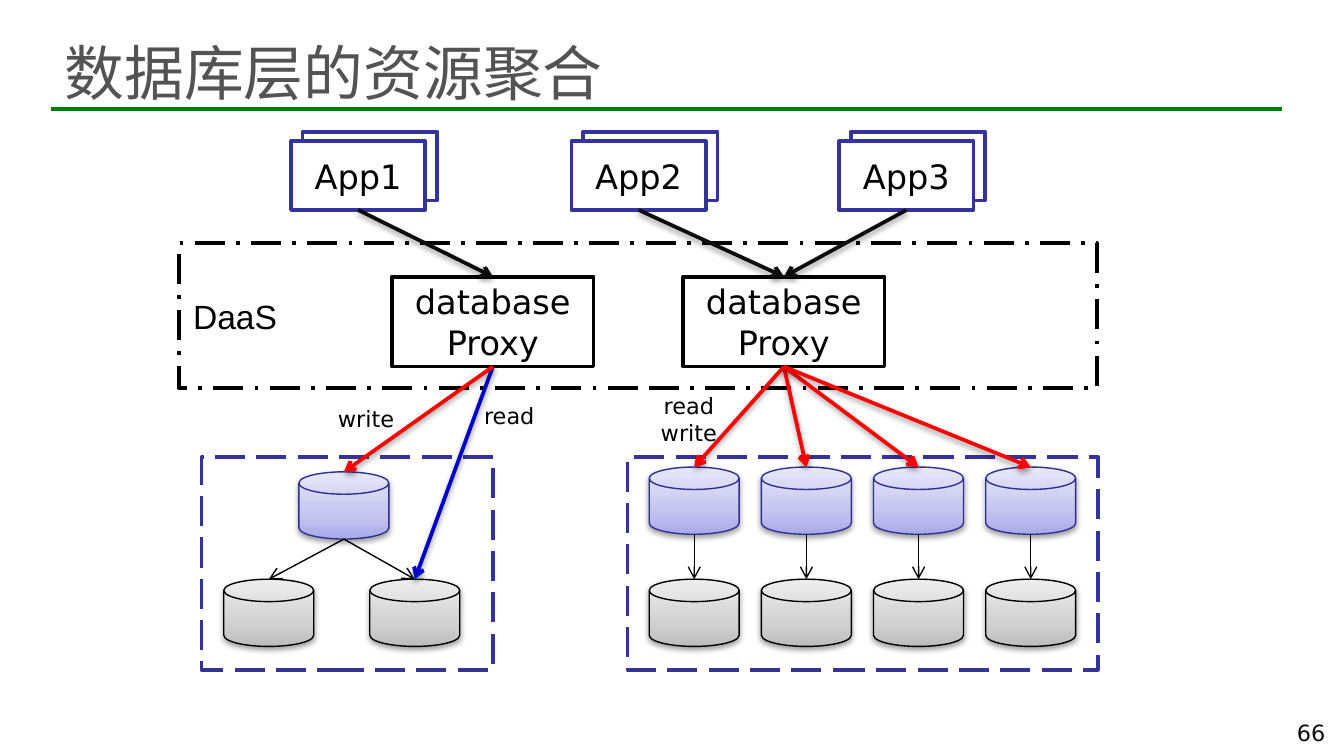
from lxml import etree
from pptx import Presentation
from pptx.dml.color import RGBColor
from pptx.enum.dml import MSO_LINE
from pptx.enum.shapes import MSO_CONNECTOR, MSO_SHAPE
from pptx.enum.text import MSO_ANCHOR, MSO_AUTO_SIZE, PP_ALIGN
from pptx.oxml.ns import qn
from pptx.util import Cm, Pt

RECT, DISK = MSO_SHAPE.RECTANGLE, MSO_SHAPE.FLOWCHART_MAGNETIC_DISK
STRAIGHT = MSO_CONNECTOR.STRAIGHT
DASH, DASH_DOT = MSO_LINE.LONG_DASH, MSO_LINE.LONG_DASH_DOT
LEFT, CENTER = PP_ALIGN.LEFT, PP_ALIGN.CENTER
MIDDLE, TOP = MSO_ANCHOR.MIDDLE, MSO_ANCHOR.TOP
NO_FIT = MSO_AUTO_SIZE.NONE

SANS, CJK, ARIAL = "DejaVu Sans", "Noto Sans CJK SC", "Arial"
BLACK, WHITE, INK, NAVY = "000000", "FFFFFF", "0D0D0D", "333399"
RED, BLUE, GREEN, GREY = "FF0000", "0000CC", "008000", "535353"

TITLE = "数据库层的资源聚合"
PAGE = "66"
LAYER = ("DaaS", (3.4, 5.46, 2.1, 1.02))
LAYER_BOX = (3.38, 4.6, 17.35, 2.74)
LABELS = [
    (["read", "write"], (12.17, 7.39, 1.7, 1.07)),
    (["read"], (8.89, 7.44, 1.47, 0.84)),
    (["write"], (5.94, 7.54, 1.96, 0.76)),
]
CLUSTERS = [(3.81, 8.64, 5.51, 4.02), (11.86, 8.64, 8.89, 4.02)]
APPS = [("App1", 5.5, 0), ("App2", 10.8, 1), ("App3", 15.86, 1)]
APP_Y, APP_W, APP_H = 2.67, 2.54, 1.3
STACK_DX, STACK_DY = 0.22, -0.18
PROXY_TEXT = ["database", "Proxy"]
PROXY_X, PROXY_Y, PROXY_W, PROXY_H = [7.41, 12.91], 5.23, 3.81, 1.7
DISK_W, DISK_H = 1.7, 1.27
MASTER = (5.65, 8.92)
REPLICA_X, REPLICA_Y = [4.23, 6.99], 10.95
SHARDS, SHARD_X, SHARD_Y, SHARD_STEP = 4, 12.27, 8.83, 2.12
PRIMARY = {"line": "2F2F98", "stops": [(0, "A9A9E9"), (35, "C4C4EF"), (100, "E8E8FA")]}
SECONDARY = {"line": BLACK, "stops": [(0, "BDBDBD"), (35, "D1D1D1"), (100, "EEEEEE")]}


def rgb(value):
    return RGBColor.from_string(value)


def write(shape, lines, size, font=SANS, color=BLACK, align=CENTER, anchor=MIDDLE, wrap=True):
    tf = shape.text_frame
    for name, value in {"word_wrap": wrap, "vertical_anchor": anchor, "auto_size": NO_FIT}.items():
        setattr(tf, name, value)
    for i, line in enumerate(lines):
        p = tf.add_paragraph() if i else tf.paragraphs[0]
        p.alignment = align
        r = p.add_run()
        r.text = line
        for name, value in {"size": Pt(size), "name": font, "bold": False}.items():
            setattr(r.font, name, value)
        r.font.color.rgb = rgb(color)
        etree.SubElement(r.font._element, qn("a:ea"), typeface=font)


def add_effects(shape, shadow):
    effects = etree.SubElement(shape._element.spPr, qn("a:effectLst"))
    if shadow:
        outer = etree.SubElement(effects, qn("a:outerShdw"), blurRad="40000", dist="20000",
                                 dir="5400000", rotWithShape="0")
        color = etree.SubElement(outer, qn("a:srgbClr"), val=BLACK)
        etree.SubElement(color, qn("a:alpha"), val="38000")


def add_box(shapes, box, line=None, dash=None):
    sp = shapes.add_shape(RECT, *map(Cm, box))
    sp.fill.solid()
    sp.fill.fore_color.rgb = rgb(WHITE)
    if line:
        sp.line.color.rgb = rgb(line)
        sp.line.width = Pt(2)
        sp.line.dash_style = dash
    else:
        sp.line.fill.background()
    add_effects(sp, False)
    return sp


def add_disk(shapes, x, y, look):
    sp = shapes.add_shape(DISK, *map(Cm, (x, y, DISK_W, DISK_H)))
    sp.fill.gradient()
    sp.fill.gradient_angle = 90
    stops = sp._element.spPr.find(".//" + qn("a:gsLst"))
    for stop in list(stops):
        stops.remove(stop)
    for position, color in look["stops"]:
        stop = etree.SubElement(stops, qn("a:gs"), pos=str(position * 1000))
        etree.SubElement(stop, qn("a:srgbClr"), val=color)
    sp.line.color.rgb = rgb(look["line"])
    sp.line.width = Pt(0.75)
    add_effects(sp, True)


def add_line(shapes, start, end, color=BLACK, width=0.75, arrow=True, shadow=False):
    line = shapes.add_connector(STRAIGHT, *map(Cm, start + end))
    line.line.color.rgb = rgb(color)
    line.line.width = Pt(width)
    if arrow:
        etree.SubElement(line.get_or_add_ln(), qn("a:tailEnd"), type="arrow")
    add_effects(line, shadow)


def main():
    prs = Presentation()
    prs.slide_width, prs.slide_height = Cm(25.4), Cm(14.29)
    s = prs.slides.add_slide(prs.slide_layouts[5])
    shapes = s.shapes

    title = shapes.title
    for name, value in {"left": 0.97, "top": 0.48, "width": 23.39, "height": 1.75}.items():
        setattr(title, name, Cm(value))
    write(title, [TITLE], 32, CJK, GREY, LEFT)
    add_line(shapes, (0.97, 2.06), (24.23, 2.06), GREEN, 2, arrow=False)

    add_box(shapes, LAYER_BOX, BLACK, DASH_DOT)
    for lines, box in LABELS:
        write(add_box(shapes, box), lines, 12)
    for box in CLUSTERS:
        add_box(shapes, box, NAVY, DASH)

    for name, x, _ in APPS:
        stack = shapes.add_group_shape().shapes
        add_box(stack, (x + STACK_DX, APP_Y + STACK_DY, APP_W, APP_H), NAVY)
        write(add_box(stack, (x, APP_Y, APP_W, APP_H), NAVY), [name], 18)
    for x in PROXY_X:
        write(add_box(shapes, (x, PROXY_Y, PROXY_W, PROXY_H), BLACK), PROXY_TEXT, 18)

    shard_xs = [SHARD_X + i * SHARD_STEP for i in range(SHARDS)]
    add_disk(shapes, *MASTER, PRIMARY)
    for x in shard_xs:
        add_disk(shapes, x, SHARD_Y, PRIMARY)
    for x in REPLICA_X + shard_xs:
        add_disk(shapes, x, REPLICA_Y, SECONDARY)

    proxy_mids = [x + PROXY_W / 2 for x in PROXY_X]
    for _, x, proxy in APPS:
        add_line(shapes, (x + APP_W / 2, APP_Y + APP_H), (proxy_mids[proxy], PROXY_Y),
                 INK, 2, shadow=True)

    outlets = [(x, PROXY_Y + PROXY_H) for x in proxy_mids]
    half = DISK_W / 2
    master_mid = MASTER[0] + half
    requests = [
        (outlets[0], (REPLICA_X[1] + half, REPLICA_Y), BLUE),
        (outlets[0], (master_mid, MASTER[1]), RED),
    ] + [(outlets[1], (x + half, SHARD_Y), RED) for x in shard_xs]
    for start, end, color in requests:
        add_line(shapes, start, end, color, 2, shadow=True)

    for x in REPLICA_X:
        add_line(shapes, (master_mid, MASTER[1] + DISK_H), (x + half, REPLICA_Y))
    for x in shard_xs:
        add_line(shapes, (x + half, SHARD_Y + DISK_H), (x + half, REPLICA_Y))

    text, box = LAYER
    write(shapes.add_textbox(*map(Cm, box)), [text], 18, ARIAL, align=LEFT, anchor=TOP)
    page = shapes.add_textbox(*map(Cm, (24.26, 13.46, 1.07, 0.79)))
    write(page, [PAGE], 12, color=INK, align=LEFT, wrap=False)

    prs.save("out.pptx")


if __name__ == "__main__":
    main()
